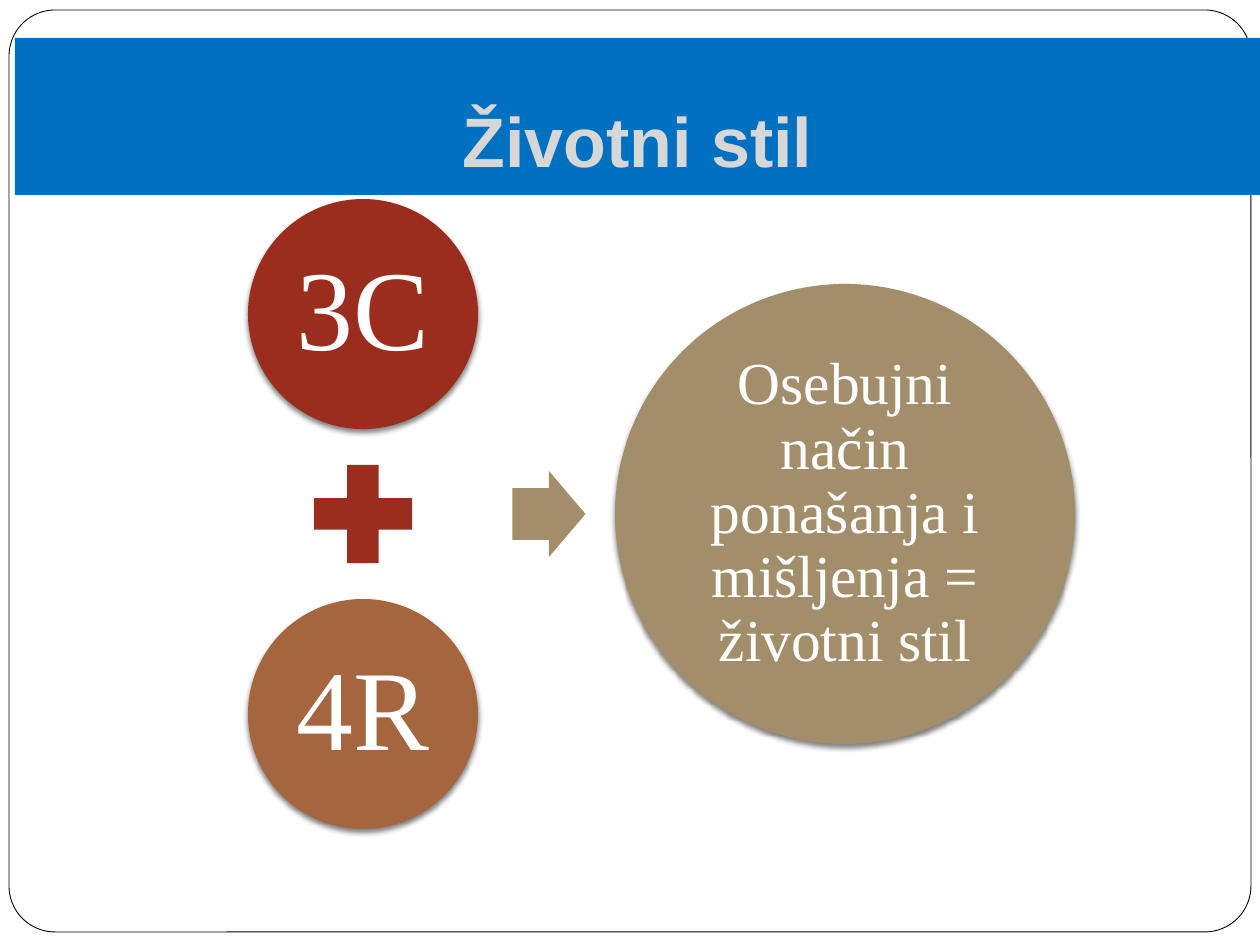
from dataclasses import dataclass

import pptx
import pptx.dml.color
import pptx.enum.shapes
import pptx.enum.text
import pptx.oxml
import pptx.oxml.ns
import pptx.util

PX_PER_INCH = 126
COLOURS = {
    "paper": "FFFFFF",
    "frame": "000000",
    "banner": "0070C0",
    "title": "D7D7D7",
    "red": "9B2D1F",
    "brown": "A4653F",
    "sand": "A28E6A",
}
SHAPE = pptx.enum.shapes.MSO_SHAPE
ANCHOR = pptx.enum.text.MSO_ANCHOR
CENTER = pptx.enum.text.PP_ALIGN.CENTER
MIDDLE_Y = 514
COLUMN_X = 363


@dataclass
class Circle:
    text: str
    center_x: int
    center_y: int
    diameter: int
    colour: str
    font_size: int
    inset: int


CIRCLES = [
    Circle("3C", COLUMN_X, MIDDLE_Y - 200, 230, "red", 65, 11),
    Circle("4R", COLUMN_X, MIDDLE_Y + 200, 230, "brown", 65, 11),
    Circle("Osebujni način ponašanja i mišljenja = životni stil",
           845, MIDDLE_Y, 460, "sand", 34, 6),
]


def px(length: float) -> int:
    return round(length * 914400 / PX_PER_INCH)


def rgb(name: str) -> pptx.dml.color.RGBColor:
    return pptx.dml.color.RGBColor.from_string(COLOURS[name])


def add_centered(slide, kind, center_x: int, center_y: int,
                 width: int, height: int, colour: str):
    """Add a flat, unlined shape around a center point."""
    shape = slide.shapes.add_shape(
        kind, px(center_x - width / 2), px(center_y - height / 2),
        px(width), px(height))
    shape.shadow.inherit = False
    shape.fill.solid()
    shape.fill.fore_color.rgb = rgb(colour)
    shape.line.fill.background()
    return shape


def add_soft_shadow(shape) -> None:
    effects = shape.element.spPr.find(pptx.oxml.ns.qn("a:effectLst"))
    effects.append(pptx.oxml.parse_xml(
        f'<a:outerShdw {pptx.oxml.ns.nsdecls("a")} blurRad="38100" '
        'dist="25400" dir="5400000" rotWithShape="0">'
        '<a:srgbClr val="000000"><a:alpha val="50000"/></a:srgbClr>'
        '</a:outerShdw>'))


def format_text(frame, text: str, font_name: str, size: int, colour: str,
                anchor, insets: tuple[int, int, int, int]) -> None:
    """Fill a frame with one centered paragraph; insets are left, top, right, bottom."""
    frame.text = text
    frame.word_wrap = True
    frame.auto_size = pptx.enum.text.MSO_AUTO_SIZE.NONE
    frame.vertical_anchor = anchor
    (frame.margin_left, frame.margin_top,
     frame.margin_right, frame.margin_bottom) = map(px, insets)
    paragraph = frame.paragraphs[0]
    paragraph.alignment = CENTER
    paragraph.font.name = font_name
    paragraph.font.size = pptx.util.Pt(size)
    paragraph.font.color.rgb = rgb(colour)


def add_title(slide):
    title = slide.shapes.title
    title.left, title.top, title.width, title.height = map(px, (15, 38, 1245, 157))
    title.fill.solid()
    title.fill.fore_color.rgb = rgb("banner")
    format_text(title.text_frame, "Životni stil", "Arial", 40, "title",
                ANCHOR.BOTTOM, (13, 6, 13, 13))
    title.text_frame.paragraphs[0].font.bold = True
    return title


def add_frame_behind(slide, title) -> None:
    frame = add_centered(slide, SHAPE.ROUNDED_RECTANGLE, 630, 471, 1242, 922, "paper")
    frame.adjustments[0] = 0.05
    frame.line.color.rgb = rgb("frame")
    frame.line.width = pptx.util.Pt(0.5)
    title.element.addprevious(frame.element)


def add_circle(slide, circle: Circle) -> None:
    shape = add_centered(slide, SHAPE.OVAL, circle.center_x, circle.center_y,
                         circle.diameter, circle.diameter, circle.colour)
    add_soft_shadow(shape)
    format_text(shape.text_frame, circle.text, "Times New Roman", circle.font_size,
                "paper", ANCHOR.MIDDLE, (circle.inset,) * 4)
    shape.text_frame.paragraphs[0].line_spacing = 0.9


def main() -> None:
    deck = pptx.Presentation()
    deck.slide_width, deck.slide_height = px(1260), px(945)
    slide = deck.slides.add_slide(deck.slide_layouts.get_by_name("Title Only"))
    add_frame_behind(slide, add_title(slide))
    for circle in CIRCLES:
        add_circle(slide, circle)
    add_centered(slide, SHAPE.MATH_PLUS, COLUMN_X, MIDDLE_Y, 134, 134, "red")
    arrow = add_centered(slide, SHAPE.RIGHT_ARROW, 549, MIDDLE_Y, 73, 86, "sand")
    arrow.adjustments[0] = 0.6
    deck.save("out.pptx")


if __name__ == "__main__":
    main()
